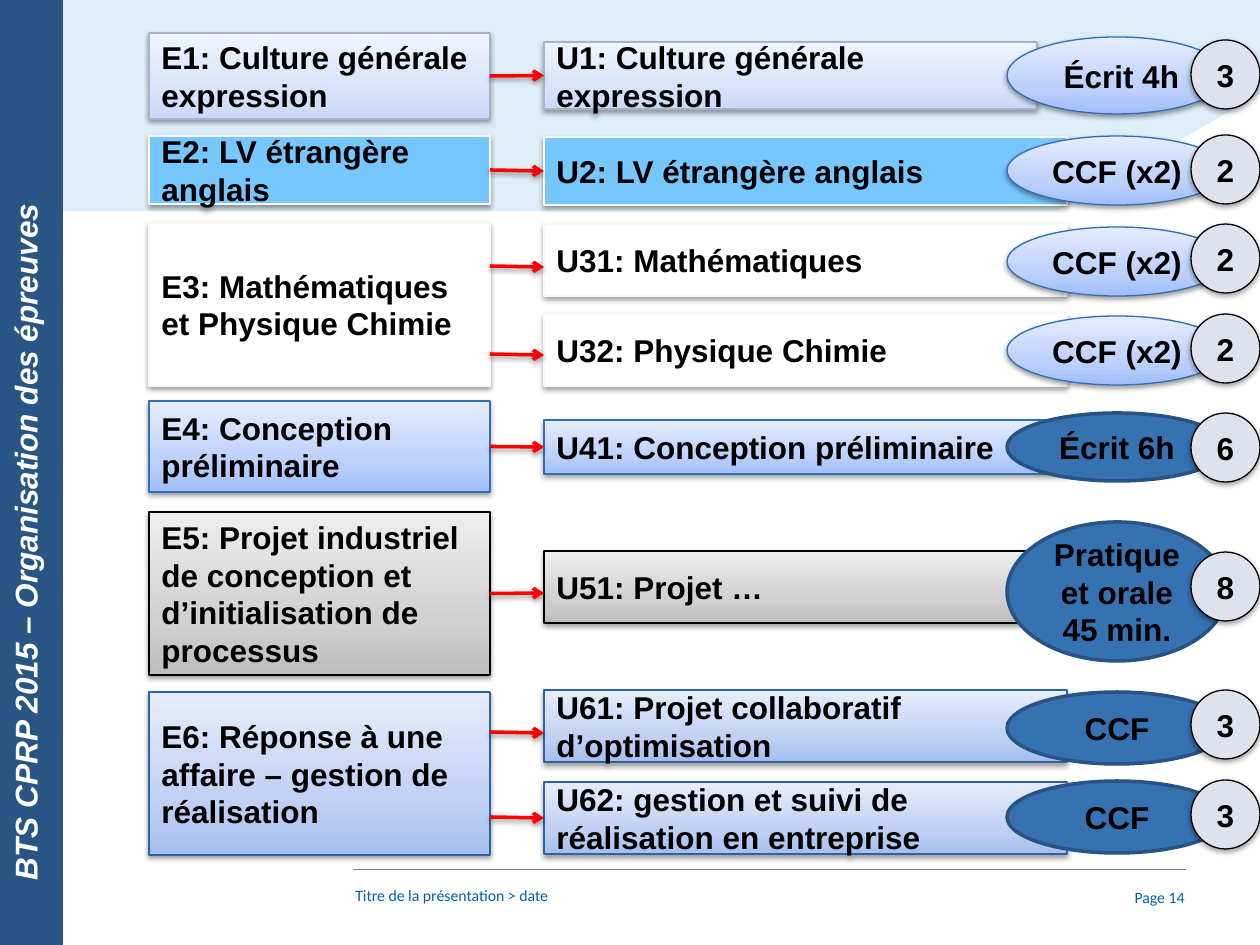
from copy import deepcopy
from lxml import etree
from pptx import Presentation
from pptx import util as u
from pptx.dml.color import RGBColor
from pptx.enum import shapes, text
from pptx.oxml.ns import qn

PX = 914400 / 126
HEX = {"ink": "000000", "white": "FFFFFF", "bar": "295585", "sky": "DEEEF8",
       "foot": "0062A8", "rule": "7F7F7F", "red": "FF0000"}

# Look: fill (one colour or gradient stops), line colour, line width, shadow opacity
LOOK = {
    "pale": (("CAD9F9", "D9E4FA", "EFF4FE"), "A5B3CD", 0.75, 38),
    "cyan": ("76C6FF", "F9F9F9", 0.75, 38),
    "plain": ("FFFFFF", "F9F9F9", 0.75, 38),
    "blue": (("A1BEFB", "BED1FB", "E5EDFF"), "326EB1", 0.75, 38),
    "grey": (("BDBDBD", "D1D1D1", "EEEEEE"), "000000", 0.75, 38),
    "steel": (("A6BEEF", "C1D1F3", "E7EDFB"), "2C64A0", 0.75, 38),
    "dark": ("3671B2", "285484", 2, 0),
    "disc": ("DDE2ED", "000000", 0.75, 35),
}
STOPS = (0, 0.35, 1)

# Exams: text, look, top, height
EXAMS = [
    ("E1: Culture générale expression", "pale", 33, 86),
    ("E2: LV étrangère anglais", "cyan", 136, 68),
    ("E3: Mathématiques et Physique Chimie", "plain", 223, 163),
    ("E4: Conception préliminaire", "blue", 401, 91),
    ("E5: Projet industriel de conception et d’initialisation de processus",
     "grey", 512, 163),
    ("E6: Réponse à une affaire – gestion de réalisation", "steel", 692, 163),
]
# Units: exam index, text, top, height, width, arrow height
UNITS = [
    (0, "U1: Culture générale expression", 42, 67, 493, 76),
    (1, "U2: LV étrangère anglais", 137, 68, 523, 171),
    (2, "U31: Mathématiques", 224, 72, 523, 267),
    (2, "U32: Physique Chimie", 314, 72, 523, 355),
    (3, "U41: Conception préliminaire", 420, 54, 523, 447),
    (4, "U51: Projet …", 551, 72, 523, 593),
    (5, "U61: Projet collaboratif d’optimisation", 690, 72, 523, 733),
    (5, "U62: gestion et suivi de réalisation en entreprise", 782, 72, 523, 818),
]
# Tests: text, look, top, height, weight, top of the weight disc
TESTS = [
    (" Écrit 4h", "blue", 37, 77, "3", 40),
    ("CCF (x2)", "blue", 136, 69, "2", 135),
    ("CCF (x2)", "blue", 227, 69, "2", 224),
    ("CCF (x2)", "blue", 316, 69, "2", 314),
    ("Écrit 6h", "dark", 413, 68, "6", 413),
    ("Pratique et orale 45 min.", "dark", 522, 139, "8", 552),
    ("CCF", "dark", 692, 72, "3", 690),
    ("CCF", "dark", 781, 72, "3", 780),
]
FOOT = [("Titre de la présentation > date", (343, 880, 745, 50), "LEFT", "TOP"),
        ("Page 14", (1086, 876, 111, 43), "RIGHT", "MIDDLE")]
EXAM_X, EXAM_W, UNIT_X = 149, 341, 544
TEST_X, TEST_W, DISC_X, DISC_D = 1007, 220, 1191, 69
BOLD = {"name": "Arial", "size": u.Pt(18), "bold": True}
SMALL = {"name": "Calibri", "size": u.Pt(9)}


def px(*nums):
    return [round(n * PX) for n in nums]


def rgb(code):
    return RGBColor.from_string(code)


def shade(props, alpha):
    """Give the shape properties a soft shadow, or none when alpha is 0."""
    fx = props.find(qn("a:effectLst"))
    if fx is None:
        fx = etree.SubElement(props, qn("a:effectLst"))
    if alpha:
        cast = etree.SubElement(fx, qn("a:outerShdw"), blurRad=str(u.Pt(3.1)),
                                dist=str(u.Pt(1.6)), dir="5400000", rotWithShape="0")
        tint = etree.SubElement(cast, qn("a:srgbClr"), val=HEX["ink"])
        etree.SubElement(tint, qn("a:alpha"), val=str(alpha * 1000))


def write(shape, words, font, color, align="LEFT", anchor="MIDDLE"):
    frame = shape.text_frame
    frame.word_wrap = True
    frame.vertical_anchor = getattr(text.MSO_ANCHOR, anchor)
    para = frame.paragraphs[0]
    para.alignment = getattr(text.PP_ALIGN, align)
    run = para.add_run()
    run.text = words
    for key, val in font.items():
        setattr(run.font, key, val)
    run.font.color.rgb = rgb(color)
    return para


def paint(shape, color):
    shape.fill.solid()
    shape.fill.fore_color.rgb = rgb(color)


def block(kind, box, look, words, align="LEFT"):
    fill, edge, width, alpha = LOOK[look]
    shape = slide.shapes.add_shape(kind, *px(*box))
    if isinstance(fill, str):
        paint(shape, fill)
    else:
        shape.fill.gradient()
        shape.fill.gradient_angle = 90
        stops = next(shape._element.spPr.iter(qn("a:gsLst")))
        stops.append(deepcopy(stops[-1]))
        for stop, spot, code in zip(shape.fill.gradient_stops, STOPS, fill):
            stop.position = spot
            stop.color.rgb = rgb(code)
    shape.line.color.rgb = rgb(edge)
    shape.line.width = u.Pt(width)
    shape.shadow.inherit = False
    shade(shape._element.spPr, alpha)
    write(shape, words, BOLD, HEX["ink"], align)
    return shape


def link(start, end, color, width, alpha=0):
    line = slide.shapes.add_connector(shapes.MSO_CONNECTOR.STRAIGHT, *px(*start, *end))
    line.line.color.rgb = rgb(color)
    line.line.width = u.Pt(width)
    shade(line._element.spPr, alpha)
    return line


def near(top, high, y):
    return abs(top + high / 2 - y) <= 2


prs = Presentation()
prs.slide_width, prs.slide_height = px(1260, 945)
slide = prs.slides.add_slide(prs.slide_layouts[6])
RECT, OVAL = shapes.MSO_SHAPE.RECTANGLE, shapes.MSO_SHAPE.OVAL

# Sky band with a cut corner
pen = slide.shapes.build_freeform(0, 0, scale=PX)
pen.add_line_segments([(0, 211), (1057, 211), (1260, 94), (1260, 0)], close=True)
band = pen.convert_to_shape()
paint(band, HEX["sky"])
band.line.fill.background()
band.shadow.inherit = False

# Footer
link((353, 869), (1186, 869), HEX["rule"], 0.5)
for words, box, align, anchor in FOOT:
    write(slide.shapes.add_textbox(*px(*box)), words, SMALL, HEX["foot"], align, anchor)

# Units and exams
units = [block(RECT, (UNIT_X, top, wide, high), EXAMS[i][1], words)
         for i, words, top, high, wide, _ in UNITS]
exams = [block(RECT, (EXAM_X, top, EXAM_W, high), look, words)
         for words, look, top, high in EXAMS]

# Arrows from exam to unit, joined where they meet the middle of a side
for (i, _, top, high, _, y), unit in zip(UNITS, units):
    arrow = link((EXAM_X + EXAM_W, y - 1), (UNIT_X, y), HEX["red"], 2, 38)
    etree.SubElement(arrow.line._get_or_add_ln(), qn("a:tailEnd"), type="arrow")
    if near(*EXAMS[i][2:], y):
        arrow.begin_connect(exams[i], 3)
    if near(top, high, y):
        arrow.end_connect(unit, 1)

# Tests and their weights
for words, look, top, high, _, _ in TESTS:
    block(OVAL, (TEST_X, top, TEST_W, high), look, words, "CENTER")
for *_, weight, top in TESTS:
    block(OVAL, (DISC_X, top, DISC_D, DISC_D), "disc", weight, "CENTER")

# Side bar with upright title
bar = slide.shapes.add_shape(RECT, *px(0, 0, 63, 945))
paint(bar, HEX["bar"])
bar.line.fill.background()
bar.shadow.inherit = False
title = write(bar, "BTS CPRP 2015 – Organisation des épreuves",
              {**BOLD, "italic": True}, HEX["white"], anchor="TOP")
title._p.get_or_add_pPr().set("marL", str(u.Pt(30)))
bar.text_frame._txBody.bodyPr.set("vert", "vert270")

prs.save("out.pptx")
